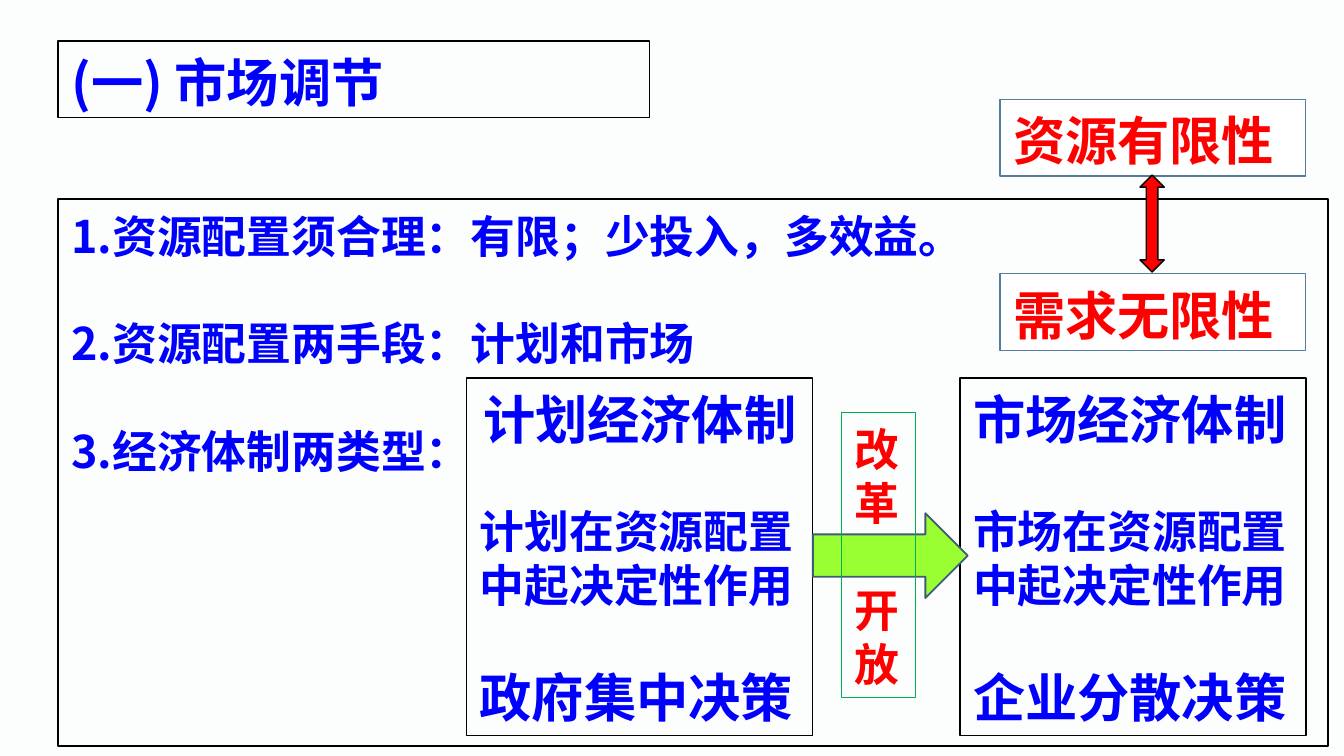
import pptx
import pptx.util
import pptx.dml.color
import pptx.enum.shapes
import pptx.enum.text
import pptx.oxml

Pt = pptx.util.Pt
SHAPES = pptx.enum.shapes.MSO_SHAPE
ALIGN = pptx.enum.text.PP_ALIGN
FONT = "Noto Sans CJK SC"
A = 'xmlns:a="http://schemas.openxmlformats.org/drawingml/2006/main"'
BLUE, RED, BLACK = "0000FF", "FF0000", "000000"


def paint(shape, fill, line, weight=0.75):
    if fill:
        shape.fill.solid()
        shape.fill.fore_color.rgb = pptx.dml.color.RGBColor.from_string(fill)
    else:
        shape.fill.background()
    shape.line.color.rgb = pptx.dml.color.RGBColor.from_string(line)
    shape.line.width = Pt(weight)


def write(shape, lines, color):
    """Fill a box with lines of (text, size, space before)."""
    frame = shape.text_frame
    frame.text = "\n".join(text for text, size, gap in lines)
    frame.word_wrap = True
    frame.auto_size = pptx.enum.text.MSO_AUTO_SIZE.NONE
    frame.vertical_anchor = pptx.enum.text.MSO_ANCHOR.TOP
    frame.margin_left = frame.margin_right = Pt(7.2)
    frame.margin_top, frame.margin_bottom = Pt(5), Pt(2)
    for para, (text, size, gap) in zip(frame.paragraphs, lines):
        para.alignment = ALIGN.LEFT
        para.line_spacing = Pt(size * 1.2)
        para.space_before = Pt(gap)
        for span in para.runs:
            span.font.size = Pt(size)
            span.font.bold = True
            span.font.name = FONT
            span.font.color.rgb = pptx.dml.color.RGBColor.from_string(color)
            span.font._element.append(
                pptx.oxml.parse_xml(f'<a:ea {A} typeface="{FONT}"/>'))


deck = pptx.Presentation()
deck.slide_width, deck.slide_height = Pt(720), Pt(405)
page = deck.slides.add_slide(deck.slide_layouts[1])
page.background.fill.solid()
page.background.fill.fore_color.rgb = pptx.dml.color.RGBColor.from_string("FCFDFD")

# Title and numbered list
title, points = page.placeholders
title.left, title.top, title.width, title.height = Pt(31), Pt(22), Pt(317), Pt(41)
points.left, points.top, points.width, points.height = Pt(31), Pt(106.7), Pt(680.5), Pt(293)
write(title, [("(一) 市场调节", 28, 0)], BLUE)
write(points, [("1.资源配置须合理：有限；少投入，多效益。", 24, 0),
               ("2.资源配置两手段：计划和市场", 24, 28.8),
               ("3.经济体制两类型：", 24, 28.8)], BLUE)
for box in (title, points):
    paint(box, None, BLACK)
for para in points.text_frame.paragraphs:
    properties = para._p.get_or_add_pPr()
    properties.set("marL", "0")
    properties.set("indent", "0")
    properties.append(pptx.oxml.parse_xml(f"<a:buNone {A}/>"))

# Two economic systems
for left, system, means, decision in (
        (250, "计划经济体制", "计划在资源配置", "政府集中决策"),
        (514.3, "市场经济体制", "市场在资源配置", "企业分散决策")):
    panel = page.shapes.add_shape(SHAPES.RECTANGLE, Pt(left), Pt(202.5), Pt(185.5), Pt(191.5))
    panel.shadow.inherit = False
    paint(panel, None, BLACK)
    write(panel, [(system, 28, 0), (means, 24, 28.8),
                  ("中起决定性作用", 24, 0), (decision, 28, 28.8)], BLUE)
    if system.startswith("计划"):
        panel.text_frame.paragraphs[0].alignment = ALIGN.CENTER

# Arrow from plan to market, with the reform label over it
reform_arrow = page.shapes.add_shape(SHAPES.RIGHT_ARROW, Pt(435.5), Pt(275), Pt(83), Pt(45.4))
reform_arrow.shadow.inherit = False
paint(reform_arrow, "99FF33", "3E5C74", 1)
reform = page.shapes.add_shape(SHAPES.RECTANGLE, Pt(450.7), Pt(221), Pt(39.6), Pt(152.6))
reform.shadow.inherit = False
paint(reform, None, "00B050")
write(reform, [("改革", 24, 0), ("开放", 24, 28.8)], RED)

# Limited resources against unlimited demand
for top, text in ((53.3, "资源有限性"), (146.7, "需求无限性")):
    card = page.shapes.add_shape(SHAPES.RECTANGLE, Pt(535.7), Pt(top), Pt(163.7), Pt(41))
    card.shadow.inherit = False
    paint(card, "FFFFFF", "547D9D")
    write(card, [(text, 28, 0)], RED)

conflict_arrow = page.shapes.add_shape(SHAPES.UP_DOWN_ARROW, Pt(610.7), Pt(93.8), Pt(13), Pt(52))
conflict_arrow.shadow.inherit = False
conflict_arrow.adjustments[0] = 0.5
conflict_arrow.adjustments[1] = 0.48
paint(conflict_arrow, RED, BLACK)

deck.save("out.pptx")
